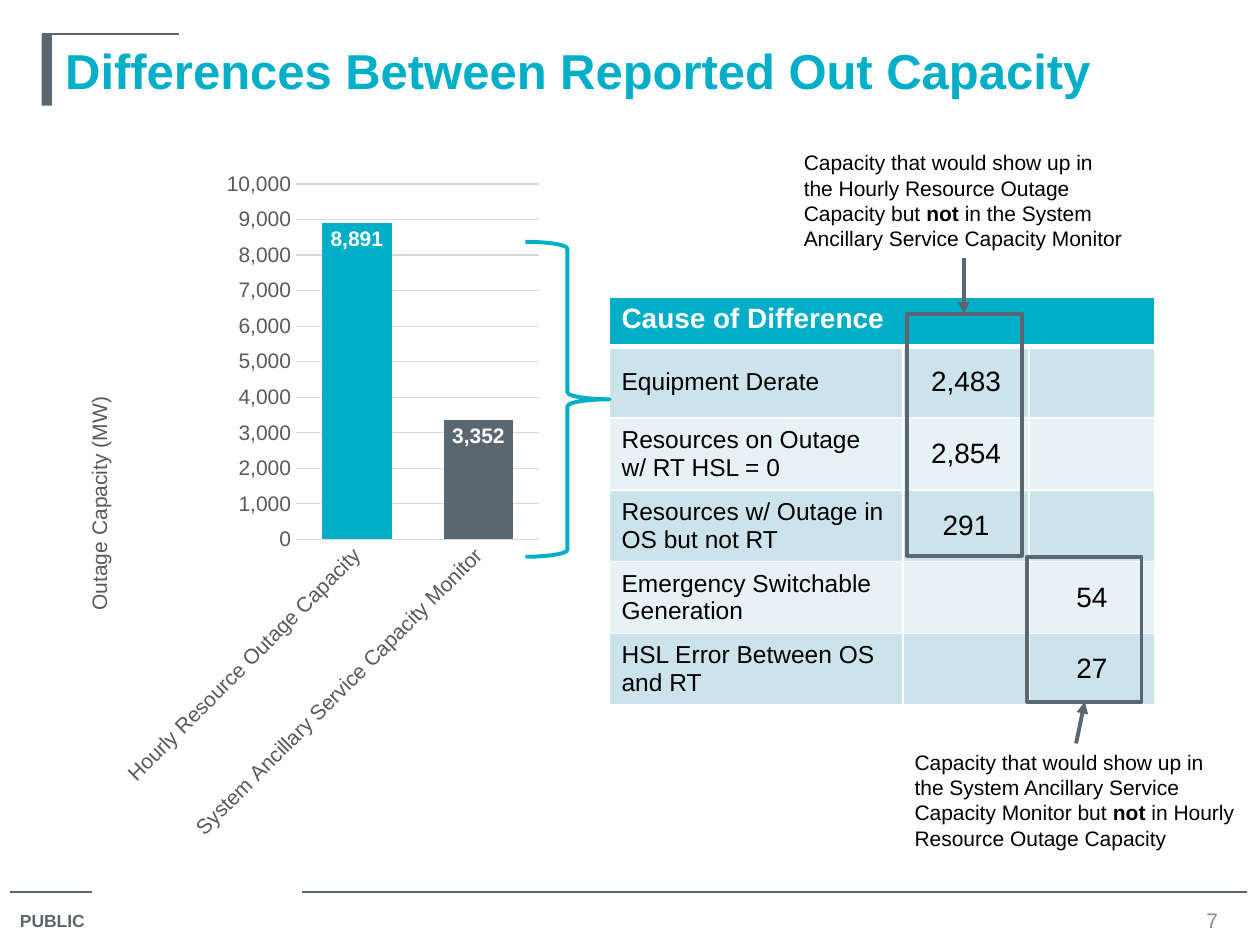
import pptx
import pptx.chart.data
import pptx.dml.color
import pptx.enum.chart
import pptx.enum.shapes
import pptx.enum.text
import pptx.oxml
import pptx.oxml.ns
import pptx.util
from dataclasses import dataclass
from lxml import etree

Pt = pptx.util.Pt
Align = pptx.enum.text.PP_ALIGN
Anchor = pptx.enum.text.MSO_ANCHOR
Shape = pptx.enum.shapes.MSO_SHAPE
FONT = "Arial"
COLORS = {"teal": "00AEC7", "slate": "5B6770", "black": "000000", "white": "FFFFFF",
          "axis": "595959", "grid": "D9D9D9", "number": "8C8C8C",
          "band_dark": "CCE3EB", "band_light": "E7F2F5"}


@dataclass
class Area:
    left: float
    top: float
    width: float
    height: float

    def lengths(self) -> list:
        return [Pt(v) for v in (self.left, self.top, self.width, self.height)]


@dataclass
class Callout:
    note: Area
    wording: tuple  # plain and bold text in turn
    frame: Area
    arrow: tuple


@dataclass
class Cause:
    label: str
    column: int
    value: str


CALLOUTS = [
    Callout(Area(452.2, 82.1, 198, 65.5),
            ("Capacity that would show up in the Hourly Resource Outage Capacity but ", "not",
             " in the System Ancillary Service Capacity Monitor"),
            Area(518.4, 179.3, 65.5, 138.2), (550.8, 147.6, 550.8, 179.3)),
    Callout(Area(515.5, 424.8, 198, 65.5),
            ("Capacity that would show up in the System Ancillary Service Capacity Monitor but ",
             "not", " in Hourly Resource Outage Capacity"),
            Area(586.8, 318.2, 65.5, 82.8), (614.9, 424.8, 619.9, 401)),
]
CAUSES = [
    Cause("Equipment Derate", 1, "2,483"),
    Cause("Resources on Outage w/ RT HSL = 0", 1, "2,854"),
    Cause("Resources w/ Outage in OS but not RT", 1, "291"),
    Cause("Emergency Switchable Generation", 2, "54"),
    Cause("HSL Error Between OS and RT", 2, "27"),
]


def rgb(name: str):
    return pptx.dml.color.RGBColor.from_string(COLORS[name])


def style_font(font, size: float, color: str, bold: bool = False) -> None:
    font.name, font.size, font.bold = FONT, Pt(size), bold
    font.color.rgb = rgb(color)


def write(frame, *wording: str, size: float, color: str = "black", bold: bool = False,
          align=Align.LEFT, anchor=Anchor.TOP, wrap: bool = True) -> None:
    """Fill a text frame; every second piece is in the opposite weight."""
    frame.word_wrap, frame.vertical_anchor = wrap, anchor
    para = frame.paragraphs[0]
    para.alignment = align
    for index, piece in enumerate(wording):
        span = para.add_run()
        span.text = piece
        style_font(span.font, size, color, bold != (index % 2 == 1))


def add_text(page, area: Area, *wording: str, **style) -> None:
    write(page.shapes.add_textbox(*area.lengths()).text_frame, *wording, **style)


def add_shape(page, kind, area: Area, fill: str = "", line: str = ""):
    shape = page.shapes.add_shape(kind, *area.lengths())
    shape.shadow.inherit = False
    if fill:
        shape.fill.solid()
        shape.fill.fore_color.rgb = rgb(fill)
    else:
        shape.fill.background()
    if line:
        shape.line.color.rgb = rgb(line)
        shape.line.width = Pt(2.25)
    else:
        shape.line.fill.background()
    return shape


def add_line(page, points: tuple, width: float = 0.75, arrow: bool = False) -> None:
    line = page.shapes.add_connector(pptx.enum.shapes.MSO_CONNECTOR.STRAIGHT,
                                     *[Pt(v) for v in points])
    line.line.color.rgb = rgb("slate")
    line.line.width = Pt(width)
    if arrow:
        etree.SubElement(line.line._get_or_add_ln(), pptx.oxml.ns.qn("a:tailEnd"), type="triangle")
    etree.SubElement(line._element.spPr, pptx.oxml.ns.qn("a:effectLst"))


def set_layout(element, **fractions: float) -> None:
    """Place a chart element by fractions of the chart's size."""
    for old in element.findall(pptx.oxml.ns.qn("c:layout")):
        element.remove(old)
    modes = {"xMode": "edge", "yMode": "edge"}
    if "w" in fractions:
        modes = {"layoutTarget": "inner", **modes}
    items = "".join(f'<c:{k} val="{v}"/>' for k, v in {**modes, **fractions}.items())
    layout = pptx.oxml.parse_xml(f'<c:layout {pptx.oxml.ns.nsdecls("c")}><c:manualLayout>'
                                 f'{items}</c:manualLayout></c:layout>')
    text = element.find(pptx.oxml.ns.qn("c:tx"))
    element.insert(0 if text is None else 1, layout)


def add_capacity_chart(page, area: Area) -> None:
    data = pptx.chart.data.CategoryChartData(number_format="#,##0")
    data.categories = ["Hourly Resource Outage Capacity",
                       "System Ancillary Service Capacity Monitor"]
    data.add_series("Series 1", (8891, 3352))
    chart = page.shapes.add_chart(pptx.enum.chart.XL_CHART_TYPE.COLUMN_CLUSTERED,
                                  *area.lengths(), data).chart
    chart.has_legend = chart.has_title = False
    style_font(chart.font, 12, "black")
    plot = chart.plots[0]
    plot.gap_width, plot.vary_by_categories = 75, False
    set_layout(chart._chartSpace.chart.plotArea, x=0.49, y=0.04, w=0.49, h=0.51)
    # Bars and their labels
    series = plot.series[0]
    for index, color in enumerate(("teal", "slate")):
        fill = series.points[index].format.fill
        fill.solid()
        fill.fore_color.rgb = rgb(color)
    labels = series.data_labels
    labels.show_value = True
    labels.number_format, labels.number_format_is_linked = "#,##0", False
    labels.position = pptx.enum.chart.XL_LABEL_POSITION.INSIDE_END
    style_font(labels.font, 12, "white", True)
    # Axes
    for axis in (chart.category_axis, chart.value_axis):
        axis.major_tick_mark = axis.minor_tick_mark = pptx.enum.chart.XL_TICK_MARK.NONE
        style_font(axis.tick_labels.font, 12, "axis")
    chart.category_axis.format.line.color.rgb = rgb("grid")
    chart.category_axis.format.line.width = Pt(0.75)
    chart.category_axis._element.txPr.bodyPr.set("rot", "-2700000")
    scale = chart.value_axis
    scale.minimum_scale, scale.maximum_scale, scale.major_unit = 0, 10000, 1000
    scale.tick_labels.number_format, scale.tick_labels.number_format_is_linked = "#,##0", False
    scale.format.line.fill.background()
    scale.major_gridlines.format.line.color.rgb = rgb("grid")
    scale.major_gridlines.format.line.width = Pt(0.75)
    frame = scale.axis_title.text_frame
    write(frame, "Outage Capacity (MW)", size=12, color="axis")
    frame._txBody.bodyPr.set("rot", "-5400000")
    set_layout(scale.axis_title._element, x=0.06, y=0.34)


def style_cell(cell, fill: str, bottom: float = 1) -> None:
    cell.fill.solid()
    cell.fill.fore_color.rgb = rgb(fill)
    for index, side in enumerate("LRTB"):
        width = Pt(bottom if side == "B" else 1)
        cell._tc.tcPr.insert(index, pptx.oxml.parse_xml(
            f'<a:ln{side} {pptx.oxml.ns.nsdecls("a")} w="{int(width)}"><a:solidFill>'
            f'<a:srgbClr val="{COLORS["white"]}"/></a:solidFill></a:ln{side}>'))


def add_cause_table(page, area: Area) -> None:
    table = page.shapes.add_table(len(CAUSES) + 1, 3, *area.lengths()).table
    for column, width in zip(table.columns, (168, 72, 72)):
        column.width = Pt(width)
    for index, row in enumerate(table.rows):
        row.height = Pt(41 if index else 28)
        band = "band_dark" if index % 2 else "band_light"
        for cell in row.cells:
            style_cell(cell, band if index else "teal", 1 if index else 3)
    header = table.cell(0, 0)
    header.merge(table.cell(0, 2))
    write(header.text_frame, "Cause of Difference", size=16, color="white", bold=True)
    for index, cause in enumerate(CAUSES, 1):
        label, value = table.cell(index, 0), table.cell(index, cause.column)
        write(label.text_frame, cause.label, size=14)
        write(value.text_frame, cause.value, size=16, align=Align.CENTER)
        label.vertical_anchor = value.vertical_anchor = Anchor.MIDDLE


def main() -> None:
    deck = pptx.Presentation()
    deck.slide_width, deck.slide_height = Pt(720), Pt(540)
    page = deck.slides.add_slide(deck.slide_layouts[6])
    # Footer and title frame
    for points in ((5.8, 509.8, 52.6, 509.8), (172.8, 509.8, 712.8, 509.8),
                   (23.8, 19.4, 102.2, 19.4)):
        add_line(page, points)
    add_shape(page, Shape.RECTANGLE, Area(23.8, 19.4, 5.8, 41), fill="slate")
    add_text(page, Area(4.3, 516.2, 55.4, 20.2), "PUBLIC", size=10, color="slate", bold=True,
             wrap=False)
    add_text(page, Area(30.2, 19.4, 666, 41), "Differences Between Reported Out Capacity",
             size=28, color="teal", bold=True, anchor=Anchor.MIDDLE)
    add_text(page, Area(671.8, 517, 41.8, 17.3), "7", size=12, color="number",
             align=Align.CENTER, anchor=Anchor.MIDDLE)
    # Chart, table and the brace that joins them
    add_capacity_chart(page, Area(30.2, 89.3, 283.7, 398.2))
    add_cause_table(page, Area(348, 170, 312, 233))
    add_shape(page, Shape.RIGHT_BRACE, Area(300.2, 138.2, 48.2, 180), line="teal")
    # Notes with framed values
    for callout in CALLOUTS:
        note = add_shape(page, Shape.RECTANGLE, callout.note, fill="white")
        write(note.text_frame, *callout.wording, size=12)
        add_shape(page, Shape.RECTANGLE, callout.frame, line="slate")
        add_line(page, callout.arrow, 2.25, arrow=True)
    deck.save("out.pptx")


if __name__ == "__main__":
    main()
